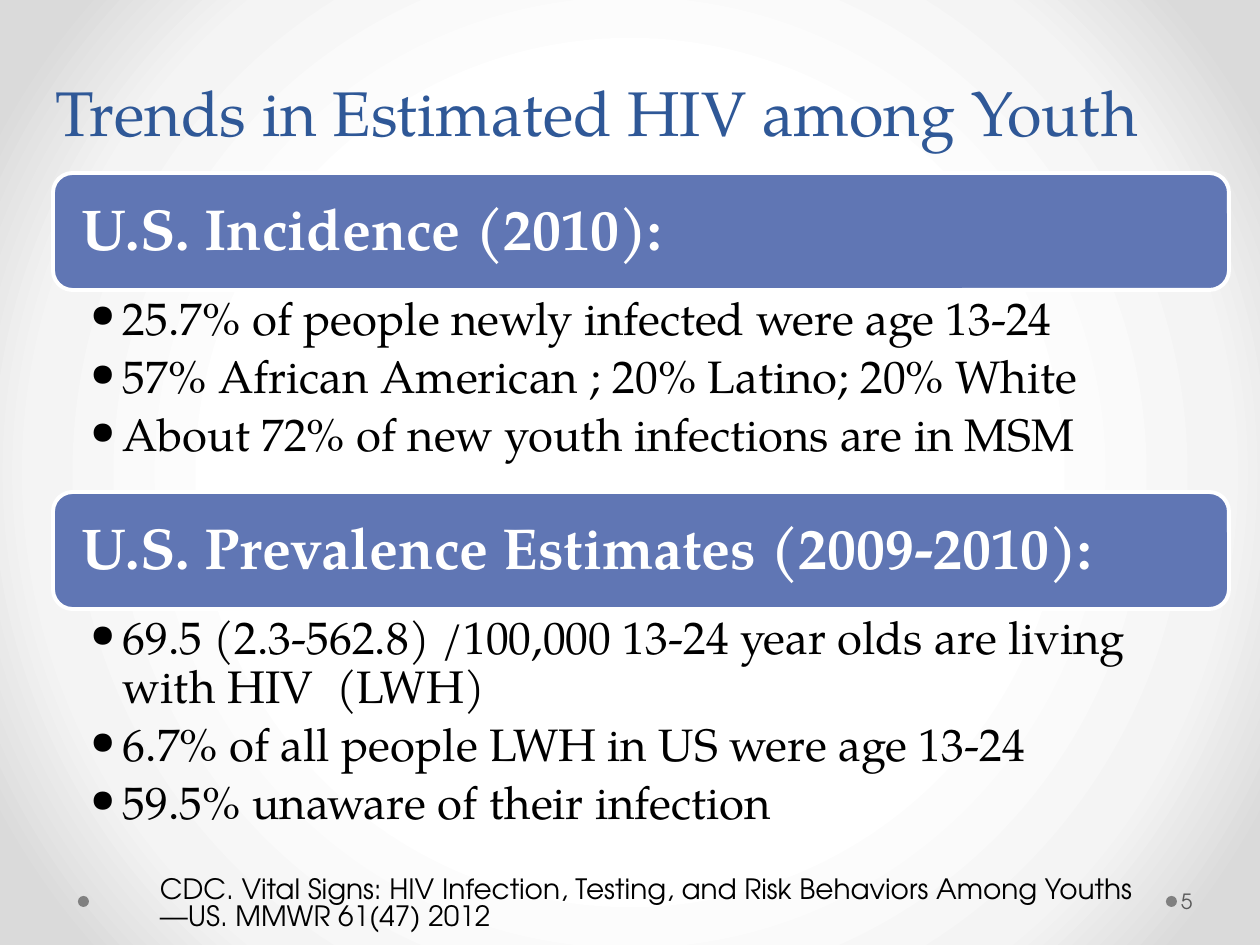
from lxml import etree
from pptx import Presentation
from pptx.dml.color import RGBColor
from pptx.enum.shapes import MSO_SHAPE
from pptx.enum.text import MSO_ANCHOR, MSO_AUTO_SIZE, PP_ALIGN
from pptx.oxml import parse_xml
from pptx.oxml.ns import nsdecls, qn
from pptx.util import Emu, Pt

ROUNDED, OVAL = MSO_SHAPE.ROUNDED_RECTANGLE, MSO_SHAPE.OVAL
TOP, MIDDLE = MSO_ANCHOR.TOP, MSO_ANCHOR.MIDDLE
LEFT = PP_ALIGN.LEFT
NO_FIT = MSO_AUTO_SIZE.NONE

SERIF, SANS = "TeX Gyre Pagella", "TeX Gyre Adventor"
EMU_PER_PX = 914400 / 126

SECTIONS = [
    (173, 203, "U.S. Incidence (2010):", [
        "25.7% of people newly infected were age 13-24",
        "57% African American ; 20% Latino; 20% White",
        "About 72% of new youth infections are in MSM"]),
    (492, 258, "U.S. Prevalence Estimates (2009-2010):", [
        "69.5 (2.3-562.8) /100,000 13-24 year olds are living with HIV  (LWH)",
        "6.7% of all people LWH in US were age 13-24",
        "59.5% unaware of their infection"]),
]


def px(length):
    return Emu(round(length * EMU_PER_PX))


def color(value):
    return RGBColor.from_string(value)


def place(shape, box):
    shape.left, shape.top, shape.width, shape.height = map(px, box)


def set_frame(shape, anchor, insets):
    frame = shape.text_frame
    frame.word_wrap = True
    frame.auto_size = NO_FIT
    frame.vertical_anchor = anchor
    (frame.margin_left, frame.margin_top,
     frame.margin_right, frame.margin_bottom) = map(px, insets)
    return frame


def write(para, text, size, font, ink, spacing=1.0, after=0, bold=False):
    para.alignment = LEFT
    para.line_spacing = spacing
    para.space_before, para.space_after = Pt(0), Pt(after)
    span = para.add_run()
    span.text = text
    span.font.size, span.font.name, span.font.bold = Pt(size), font, bold
    span.font.color.rgb = color(ink)


def indent(para, margin, first=0, bullet=None):
    props = para._p.get_or_add_pPr()
    props.set("marL", str(px(margin)))
    props.set("indent", str(px(first)))
    if bullet:
        etree.SubElement(props, qn("a:buFont")).set("typeface", SERIF)
        etree.SubElement(props, qn("a:buChar")).set("char", bullet)


def add_filled(page, kind, box, fill):
    shape = page.shapes.add_shape(kind, *map(px, box))
    shape.shadow.inherit = False
    shape.fill.solid()
    shape.fill.fore_color.rgb = color(fill)
    shape.line.fill.background()
    return shape


def paint_background(page):
    stops = "".join(
        f'<a:gs pos="{pos * 1000}"><a:srgbClr val="{value}"/></a:gs>'
        for pos, value in [(50, "FFFFFF"), (76, "F4F4F4"), (92, "DADADA")])
    background = parse_xml(
        f'<p:bg {nsdecls("p", "a")}><p:bgPr><a:gradFill><a:gsLst>{stops}</a:gsLst>'
        '<a:path path="circle"><a:fillToRect l="50000" t="50000" r="50000" b="50000"/>'
        '</a:path></a:gradFill><a:effectLst/></p:bgPr></p:bg>')
    page.background.fill.background()
    old = page._element.cSld.find(qn("p:bg"))
    old.getparent().replace(old, background)


def add_title(page, box):
    title = page.shapes.title
    place(title, box)
    frame = set_frame(title, MIDDLE, (13, 0, 13, 0))
    write(frame.paragraphs[0], "Trends in Estimated HIV among Youth",
          36, SERIF, "2F5897", Pt(58))


def add_section(page, body, box, heading, items):
    left, top, width, height = box
    bar_height = 117

    # Heading bar
    bar = add_filled(page, ROUNDED, (left, top, width, bar_height), "6076B4")
    bar.line.color.rgb = color("FFFFFF")
    bar.line.width = Pt(2.25)
    frame = set_frame(bar, MIDDLE, (23, 18, 23, 18))
    write(frame.paragraphs[0], heading, 33, SERIF, "FFFFFF", 0.9, bold=True)

    # Bulleted list
    place(body, (left, top + bar_height, width, height - bar_height))
    frame = set_frame(body, TOP, (38, 6, 33, 6))
    for index, item in enumerate(items):
        para = frame.add_paragraph() if index else frame.paragraphs[0]
        write(para, item, 26, SERIF, "000000", 0.9, after=5.2)
        indent(para, 32, -32, "•")


def add_footer(page, box):
    left, top, width, height = box

    # Dots at both ends
    for offset in (0, 1088):
        add_filled(page, OVAL, (left + offset, top + 24, 11, 11), "808080")

    # Citation
    source = page.shapes.add_textbox(*map(px, (left + 6, top, 1092, height)))
    para = set_frame(source, TOP, (13, 6, 13, 6)).paragraphs[0]
    write(para, "CDC. Vital Signs: HIV Infection, Testing, and Risk Behaviors "
          "Among Youths —US. MMWR 61(47) 2012", 16, SANS, "000000", 0.8)
    indent(para, 63)

    # Page number
    number = page.shapes.add_textbox(*map(px, (left + 1099, top + 4, 77, 50)))
    para = set_frame(number, MIDDLE, (4, 6, 6, 6)).paragraphs[0]
    write(para, "5", 12, SANS, "595959")


def main():
    deck = Presentation()
    deck.slide_width, deck.slide_height = px(1260), px(945)
    page = deck.slides.add_slide(deck.slide_layouts[3])
    paint_background(page)
    add_title(page, (42, 47, 1207, 102))
    bodies = [page.placeholders[1], page.placeholders[2]]
    for body, (top, list_height, heading, items) in zip(bodies, SECTIONS):
        add_section(page, body, (53, top, 1176, 117 + list_height), heading, items)
    add_footer(page, (78, 872, 1176, 67))
    deck.save("out.pptx")


if __name__ == "__main__":
    main()
